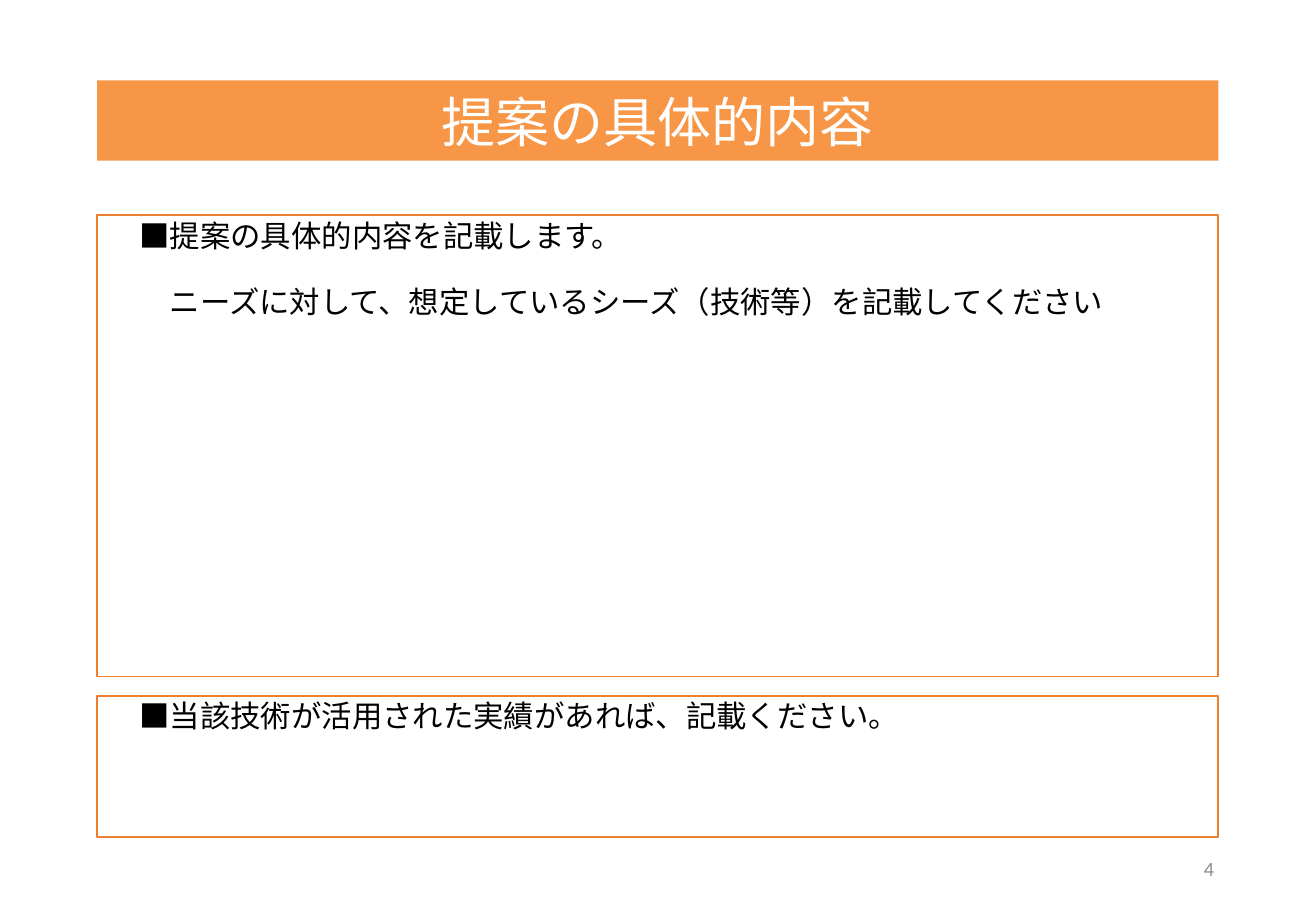
from lxml.etree import SubElement as Sub
from pptx import Presentation as Deck
from pptx.dml.color import RGBColor as Rgb
from pptx.enum.shapes import MSO_SHAPE as Kind
from pptx.enum.text import MSO_ANCHOR as Anchor, PP_ALIGN as Align
from pptx.oxml.ns import qn
from pptx.util import Cm, Pt

SANS = "Noto Sans CJK JP"
LEFT, WIDE = 2.03, 23.44
STEP = 0.635


def paint(part, color):
    """Give a fill, or a line's fill, one solid colour."""
    part.solid()
    part.fore_color.rgb = Rgb.from_string(color)


def write(para, text, size=18, font=SANS, color="000000",
          align=Align.LEFT, indent=0, before=0, pitch=1.0):
    """Put formatted text into a paragraph."""
    para.alignment = align
    para.space_before = Pt(before)
    para.line_spacing = pitch
    props = para._p.get_or_add_pPr()
    props.set("marL", str(Cm(indent)))
    props.set("indent", "0")
    run = para.add_run()
    run.text = text
    run.font.size = Pt(size)
    run.font.name = font
    paint(run.font.fill, color)
    Sub(run._r.get_or_add_rPr(), qn("a:ea"), typeface=font)


def block(slide, top, high, fill, edge=None):
    """Add a full-width rectangle and return its text frame."""
    shape = slide.shapes.add_shape(
        Kind.RECTANGLE, Cm(LEFT), Cm(top), Cm(WIDE), Cm(high))
    shape.shadow.inherit = False
    paint(shape.fill, fill)
    if edge:
        paint(shape.line.fill, edge)
        shape.line.width = Pt(1)
    else:
        shape.line.fill.background()
    frame = shape.text_frame
    frame.word_wrap = True
    return frame


def title(slide, text):
    """Add the orange title bar."""
    frame = block(slide, 1.68, 1.68, "F79646")
    frame.margin_left = frame.margin_right = 0
    frame.margin_top = frame.margin_bottom = 0
    frame.vertical_anchor = Anchor.MIDDLE
    write(frame.paragraphs[0], text, size=32, color="FFFFFF",
          align=Align.CENTER)


def panel(slide, top, high, head, note=None):
    """Add an outlined box with a heading and an optional note."""
    frame = block(slide, top, high, "FFFFFF", "ED7D31")
    frame.vertical_anchor = Anchor.TOP
    write(frame.paragraphs[0], head, indent=STEP, pitch=0.9)
    if note:
        write(frame.add_paragraph(), note, indent=2 * STEP,
              before=19.8, pitch=0.9)


def number(slide, text):
    """Add the page number."""
    box = slide.shapes.add_textbox(Cm(19.43), Cm(17.65), Cm(6.2), Cm(1.02))
    frame = box.text_frame
    frame.word_wrap = True
    frame.vertical_anchor = Anchor.MIDDLE
    write(frame.paragraphs[0], text, size=12, font="Calibri",
          color="8C8C8C", align=Align.RIGHT)


def main():
    """Build and save the slide."""
    deck = Deck()
    deck.slide_width, deck.slide_height = Cm(27.51), Cm(19.05)
    slide = deck.slides.add_slide(deck.slide_layouts[6])
    title(slide, "提案の具体的内容")
    panel(slide, 4.5, 9.65, "■提案の具体的内容を記載します。",
          "ニーズに対して、想定しているシーズ（技術等）を記載してください")
    panel(slide, 14.55, 2.95, "■当該技術が活用された実績があれば、記載ください。")
    number(slide, "4")
    deck.save("out.pptx")


if __name__ == "__main__":
    main()
